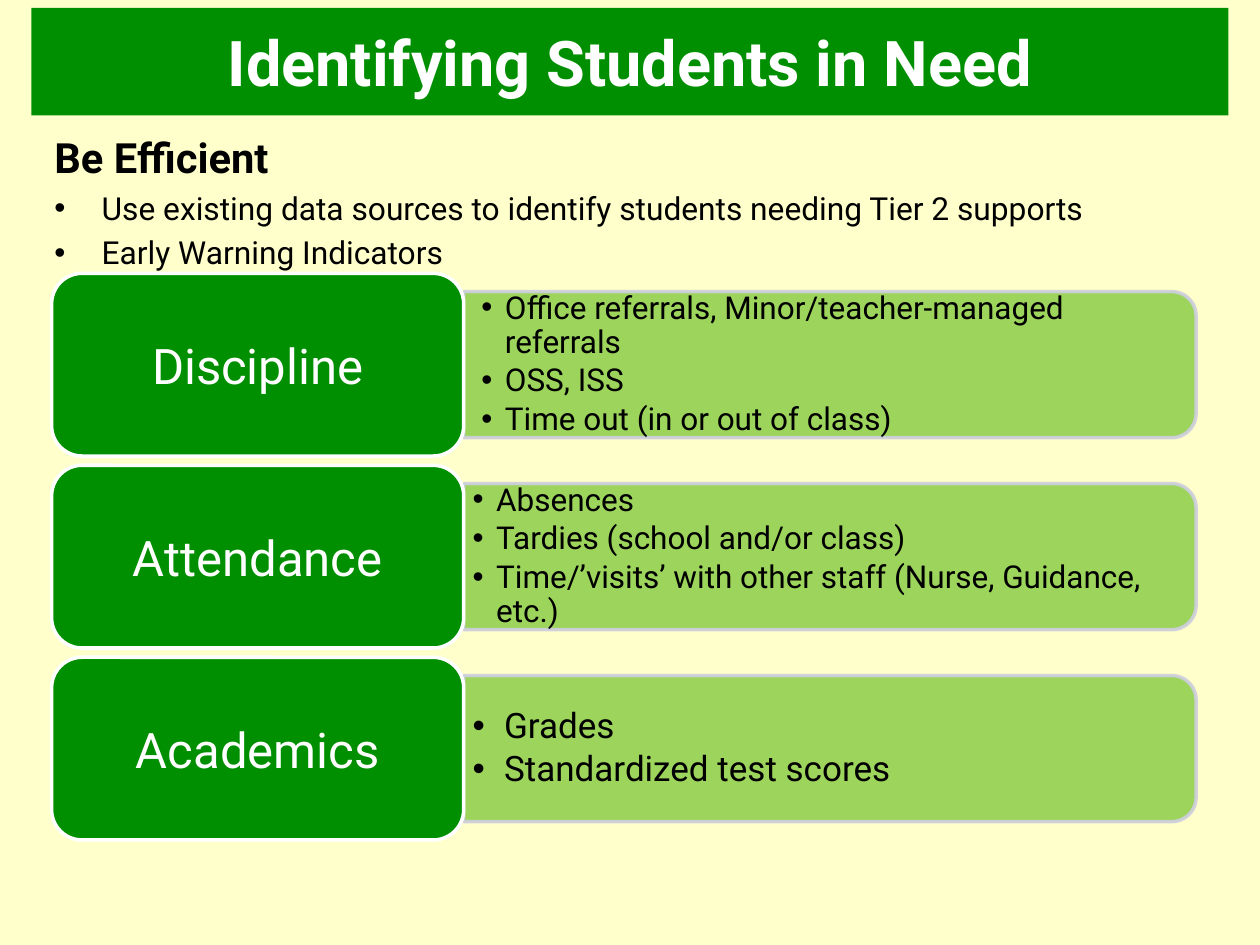
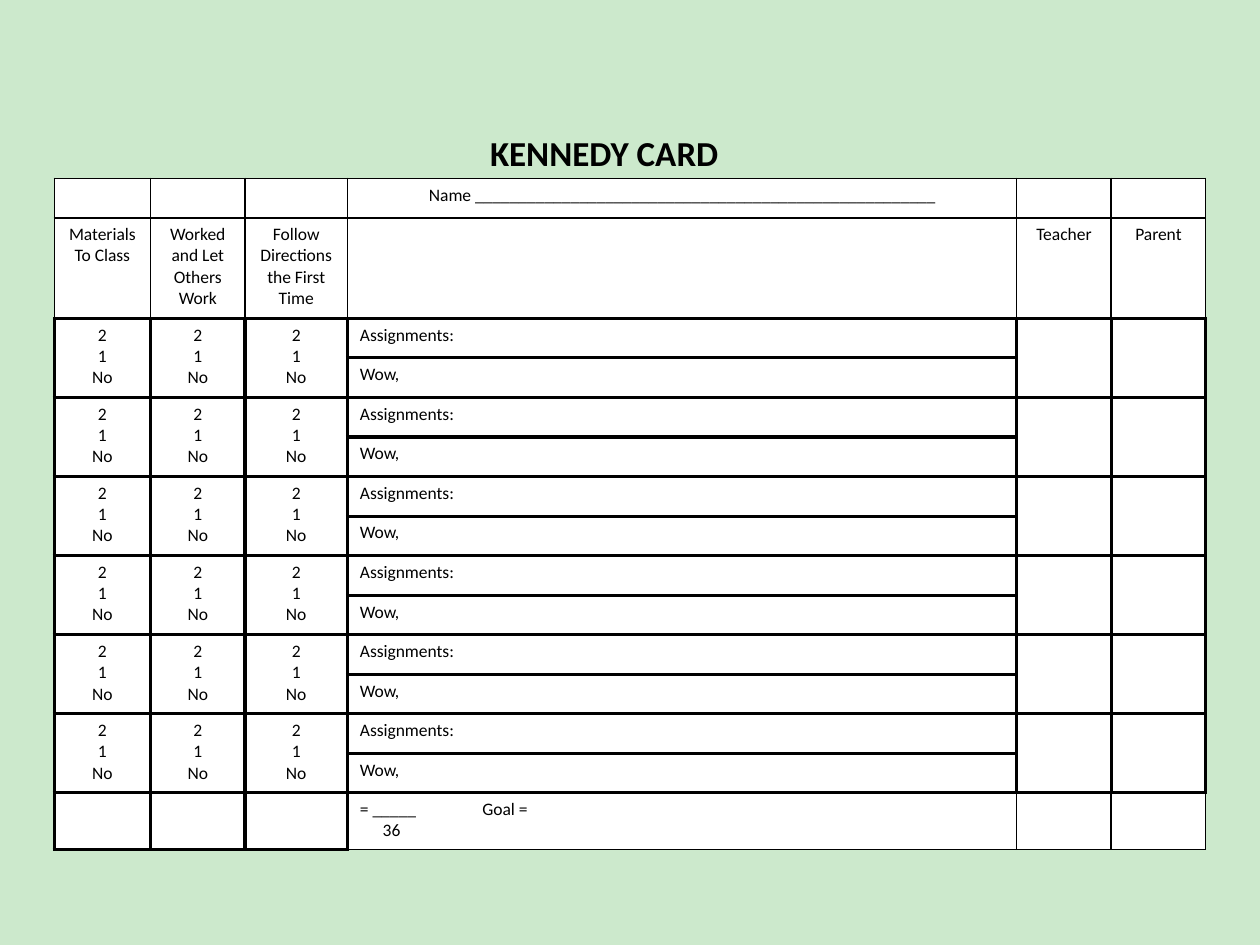
from lxml.etree import SubElement
from pptx import Presentation
from pptx.dml.color import RGBColor
from pptx.enum.shapes import MSO_SHAPE as Shape
from pptx.enum.text import MSO_ANCHOR as Anchor, PP_ALIGN as Align
from pptx.oxml.ns import qn
from pptx.util import Pt

GREEN, LIME, BORDER = "008F00", "92D050", "CECEDE"
CREAM, MINT, WHITE, BLACK = "FFFFCC", "CCE9CC", "FFFFFF", "000000"
HEADING_FONT, CARD_FONT = "Roboto", "Calibri"


def color(hex_string):
    return RGBColor.from_string(hex_string)


class Deck:
    def __init__(self):
        self.presentation = Presentation()
        self.presentation.slide_width = Pt(720)
        self.presentation.slide_height = Pt(540)
        self.slide = None
        self.font = HEADING_FONT

    def new_slide(self, background, font):
        self.slide = self.presentation.slides.add_slide(self.presentation.slide_layouts[6])
        fill = self.slide.background.fill
        fill.solid()
        fill.fore_color.rgb = color(background)
        self.font = font

    def style(self, paragraph, size, ink=BLACK, bold=False, align=Align.LEFT):
        paragraph.alignment = align
        font = paragraph.font
        font.name, font.size, font.bold = self.font, Pt(size), bold
        font.color.rgb = color(ink)
        if not paragraph.runs:
            SubElement(paragraph._p, qn("a:endParaRPr"), sz=str(size * 100))

    def bullet(self, paragraph, indent):
        properties = paragraph._p.get_or_add_pPr()
        properties.set("marL", str(Pt(indent)))
        properties.set("indent", str(-Pt(indent)))
        SubElement(properties, qn("a:buFont"), typeface="Arial")
        SubElement(properties, qn("a:buChar"), char="•")

    def shape(self, kind, left, top, width, height, fill, line=None, opacity=100):
        shape = self.slide.shapes.add_shape(kind, Pt(left), Pt(top), Pt(width), Pt(height))
        shape.shadow.inherit = False
        shape.fill.solid()
        shape.fill.fore_color.rgb = color(fill)
        if line:
            shape.line.color.rgb = color(line)
            shape.line.width = Pt(2)
        else:
            shape.line.fill.background()
        if opacity < 100:
            for paint in shape._element.spPr.iter(qn("a:srgbClr")):
                SubElement(paint, qn("a:alpha"), val=str(opacity * 1000))
        return shape

    def label(self, shape, text, size, bold=False):
        frame = shape.text_frame
        frame.vertical_anchor = Anchor.MIDDLE
        frame.text = text
        self.style(frame.paragraphs[0], size, WHITE, bold, Align.CENTER)

    def text_box(self, left, top, width, height, lines, anchor=Anchor.TOP, wrap=True, margins=(7.2, 3.6)):
        box = self.slide.shapes.add_textbox(Pt(left), Pt(top), Pt(width), Pt(height))
        frame = box.text_frame
        frame.word_wrap = wrap
        frame.vertical_anchor = anchor
        frame.margin_left = frame.margin_right = Pt(margins[0])
        frame.margin_top = frame.margin_bottom = Pt(margins[1])
        frame.text = "\n".join(lines)
        return frame.paragraphs

    def table(self, left, top, widths, heights):
        frame = self.slide.shapes.add_table(len(heights), len(widths), Pt(left), Pt(top),
                                            Pt(sum(widths)), Pt(sum(heights)))
        table = frame.table
        table.first_row = table.horz_banding = False
        for column, width in zip(table.columns, widths):
            column.width = Pt(width)
        for row, height in zip(table.rows, heights):
            row.height = Pt(height)
        return table

    def cell(self, cell, text, align, borders):
        properties = cell._tc.get_or_add_tcPr()
        for side, width in zip("LRTB", borders):
            line = SubElement(properties, qn(f"a:ln{side}"), w=str(Pt(width)))
            paint = SubElement(line, qn("a:solidFill"))
            SubElement(paint, qn("a:srgbClr"), val=BLACK)
        cell.fill.solid()
        cell.fill.fore_color.rgb = color(WHITE)
        cell.text_frame.text = text
        for paragraph in cell.text_frame.paragraphs:
            self.style(paragraph, 10, align=align)


def build_identifying(deck):
    deck.new_slide(CREAM, HEADING_FONT)
    banner = deck.shape(Shape.RECTANGLE, 18, 4.5, 684, 61.5, GREEN)
    deck.label(banner, "Identifying Students in Need", 36, True)

    heading, *points = deck.text_box(24, 72, 660, 78, [
        "Be Efficient",
        "Use existing data sources to identify students needing Tier 2 supports",
        "Early Warning Indicators",
    ])
    deck.style(heading, 23.8, bold=True)
    for point in points:
        point.space_before = Pt(3.7)
        deck.bullet(point, 27)
        deck.style(point, 18.1)

    indicators = [
        ("Discipline", 18, 13.5, (10, 5),
         ["Office referrals, Minor/teacher-managed referrals", "OSS, ISS", "Time out (in or out of class)"]),
        ("Attendance", 18, 13.5, (5, 2.5),
         ["Absences", "Tardies (school and/or class)",
          "Time/’visits’ with other staff (Nurse, Guidance, etc.)"]),
        ("Academics", 20, 18, (5, 2.5), ["Grades", "Standardized test scores"]),
    ]
    card_left, card_width, card_height, pitch = 29.5, 235.5, 104.4, 109.7
    band_left, band_width, band_height = card_left + card_width, 418.5, 83.5
    for index, (name, size, indent, margins, examples) in enumerate(indicators):
        top = 156.2 + index * pitch
        middle = top + card_height / 2
        band = deck.shape(Shape.ROUND_2_SAME_RECTANGLE,
                          band_left + (band_width - band_height) / 2, middle - band_width / 2,
                          band_height, band_width, LIME, BORDER, 90)
        band.rotation = 90
        for paragraph in deck.text_box(band_left, middle - 37.8, 414.5, 75.6, examples,
                                       Anchor.MIDDLE, margins=margins):
            paragraph.line_spacing = 0.9
            paragraph.space_after = Pt(size * 0.15)
            deck.bullet(paragraph, indent)
            deck.style(paragraph, size)
        card = deck.shape(Shape.ROUNDED_RECTANGLE, card_left, top, card_width, card_height, GREEN, WHITE)
        deck.label(card, name, 28)


def build_kennedy_card(deck):
    deck.new_slide(MINT, CARD_FONT)
    title = deck.text_box(280, 75, 132, 24.4, ["KENNEDY CARD"], Anchor.MIDDLE, False, (0, 0))[0]
    deck.style(title, 20, bold=True)

    periods = 6
    score = "2\n1\nNo"
    rows = [
        ["", "", "", "Name " + "_" * 53, "", ""],
        ["Materials\nTo Class", "Worked and Let Others Work", "Follow Directions the First Time",
         "", "Teacher", "Parent"],
    ]
    for period in range(periods):
        rows += [[score] * 3 + ["Assignments:", "", ""], ["", "", "", "Wow,", "", ""]]
    rows.append(["", "", "", "= _____\tGoal =\n36", "", ""])

    table = deck.table(31, 102, [55, 54, 58.5, 382.5, 54, 54], [22.5, 57.5] + [22.6] * 2 * periods + [32.4])
    last = len(rows) - 1
    for row, texts in enumerate(rows):
        for column, text in enumerate(texts):
            if row < 2:
                borders = (1, 1, 1, 1 + row)
            elif row == last and column > 2:
                borders = (2 if column == 3 else 1, 1, 2, 1)
            else:
                borders = (2, 2, 2, 2)
            align = Align.LEFT if column == 3 and row > 0 else Align.CENTER
            cell = table.cell(row, column)
            if row == last and column == 3:
                cell.text_frame.text = text
            deck.cell(cell, text, align, borders)
    for row in range(2, last, 2):
        for column in (0, 1, 2, 4, 5):
            table.cell(row, column).merge(table.cell(row + 1, column))

    total, maximum = table.cell(last, 3).text_frame.paragraphs
    properties = total._p.get_or_add_pPr()
    tabs = properties.makeelement(qn("a:tabLst"))
    SubElement(tabs, qn("a:tab"), pos=str(Pt(70)), algn="l")
    properties.insert(0, tabs)
    maximum._p.get_or_add_pPr().set("marL", str(Pt(13)))


def main():
    deck = Deck()
    build_identifying(deck)
    build_kennedy_card(deck)
    deck.presentation.save("out.pptx")


if __name__ == "__main__":
    main()
